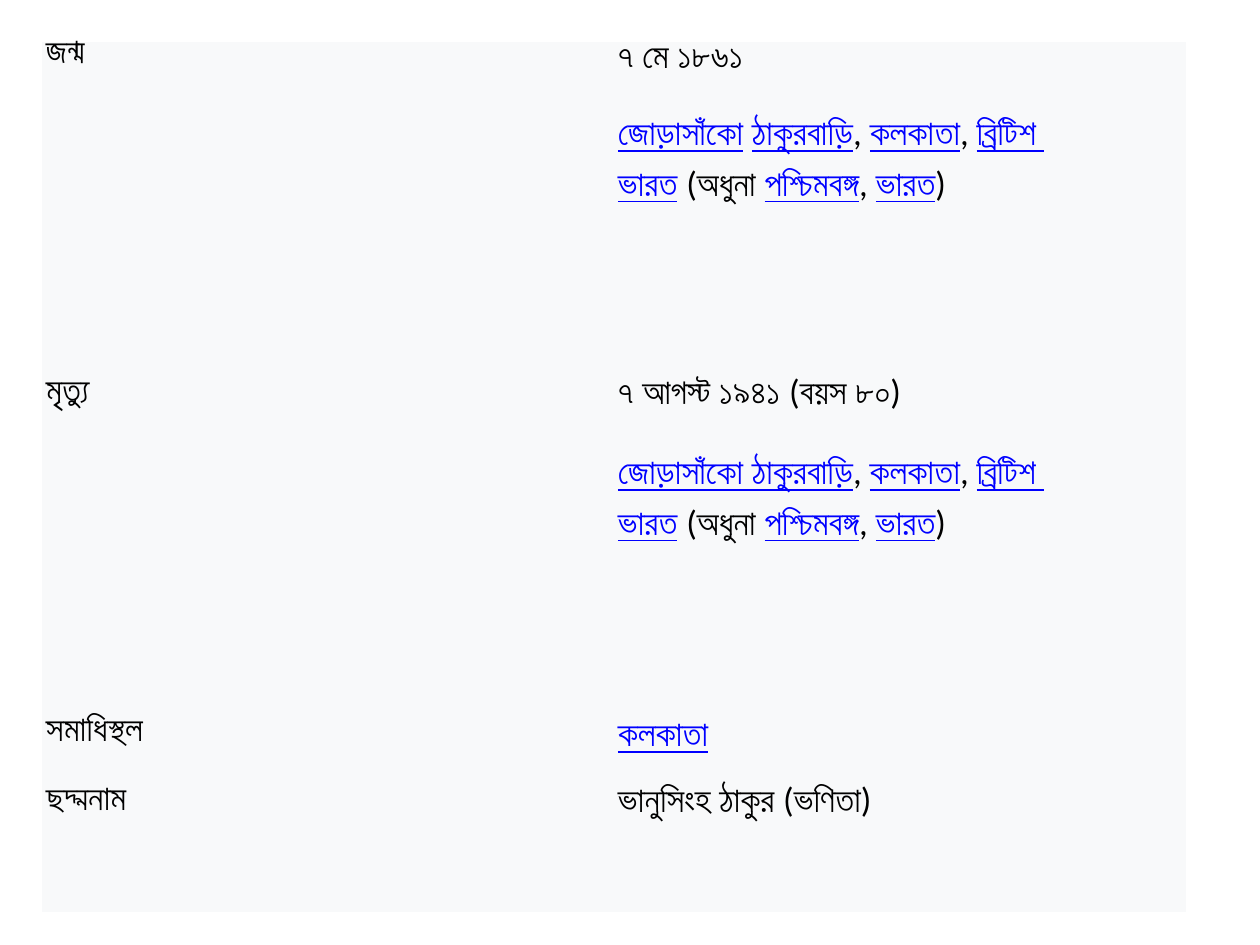
import pptx
import pptx.dml.color
import pptx.oxml.ns
import pptx.util

RGBColor = pptx.dml.color.RGBColor
Pt = pptx.util.Pt

BLACK = RGBColor(0x00, 0x00, 0x00)
BLUE = RGBColor(0x00, 0x00, 0xFF)
PALE = RGBColor(0xF8, 0xF9, 0xFA)

FONT = "Calibri"
SIZE = 20
NO_STYLE = "{2D5ABB26-0587-4C30-8999-92F81FD0307C}"

LINK, PLAIN, LABEL = "link", "plain", "label"

CITY = [(", ", PLAIN), ("কলকাতা", LINK), (", ", PLAIN), ("ব্রিটিশ ", LINK)]
COUNTRY = [("ভারত", LINK), (" (অধুনা ", PLAIN), ("পশ্চিমবঙ্গ", LINK),
           (", ", PLAIN), ("ভারত", LINK), (")", PLAIN)]
BIRTHPLACE = [("জোড়াসাঁকো", LINK), (" ", PLAIN), ("ঠাকুরবাড়ি", LINK)] + CITY
DEATHPLACE = [("জোড়াসাঁকো ঠাকুরবাড়ি", LINK)] + CITY

ROWS = [
    (339, "জন্ম", [[("৭ মে ১৮৬১", PLAIN)], BIRTHPLACE, COUNTRY]),
    (339, "মৃত্যু", [[("৭ আগস্ট ১৯৪১ (বয়স ৮০)", PLAIN)], DEATHPLACE, COUNTRY]),
    (69, "সমাধিস্থল", [[("কলকাতা", LINK)]]),
    (123, "ছদ্মনাম", [[("ভানুসিংহ ঠাকুর (ভণিতা)", PLAIN)]]),
]

LEFT, TOP, COL_W = 42, 42, 572
LABEL_INSETS = (4, 5, 14, 4)
VALUE_INSETS = (4, 4, 4, 4)
LABEL_LINE, VALUE_LINE = 13.2, 16.8
GAP = 6


def px(n):
    return round(n * 914400 / 126)


def fill_cell(cell, paragraphs, insets, line):
    cell.fill.solid()
    cell.fill.fore_color.rgb = PALE
    (cell.margin_left, cell.margin_top,
     cell.margin_right, cell.margin_bottom) = map(px, insets)
    tf = cell.text_frame
    for i, runs in enumerate(paragraphs):
        p = tf.paragraphs[0] if i == 0 else tf.add_paragraph()
        p.line_spacing = Pt(line)
        p.space_before = Pt(GAP + line if i == 1 else GAP)
        p.space_after = Pt(GAP)
        for text, kind in runs:
            r = p.add_run()
            r.text = text
            r.font.name = FONT
            r.font.size = Pt(SIZE)
            r.font.bold = kind == LABEL
            r.font.underline = kind == LINK
            r.font.color.rgb = BLUE if kind == LINK else BLACK


prs = pptx.Presentation()
prs.slide_width, prs.slide_height = px(1260), px(945)
s = prs.slides.add_slide(prs.slide_layouts[6])

table = s.shapes.add_table(len(ROWS), 2, px(LEFT), px(TOP), px(2 * COL_W),
                           px(sum(row[0] for row in ROWS))).table
table.first_row = False
table.horz_banding = False
table._tbl.tblPr.find(pptx.oxml.ns.qn("a:tableStyleId")).text = NO_STYLE
for column in table.columns:
    column.width = px(COL_W)

for i, (height, label, value) in enumerate(ROWS):
    table.rows[i].height = px(height)
    fill_cell(table.cell(i, 0), [[(label, LABEL)]], LABEL_INSETS, LABEL_LINE)
    fill_cell(table.cell(i, 1), value, VALUE_INSETS, VALUE_LINE)

prs.save("out.pptx")
